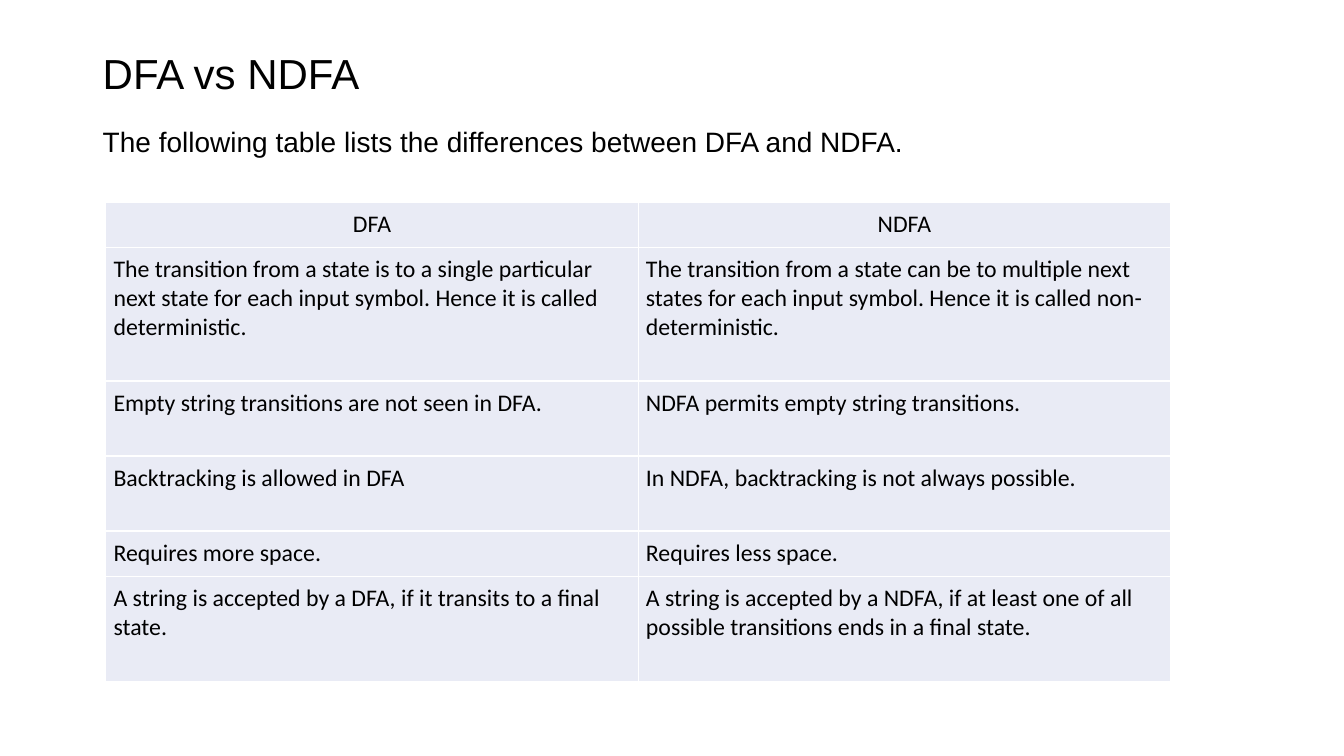
"""Build a slide with a table that compares DFA and NDFA."""
from lxml import etree
from pptx import Presentation
from pptx.dml.color import RGBColor
from pptx.enum.text import MSO_ANCHOR, MSO_AUTO_SIZE, PP_ALIGN
from pptx.oxml.ns import qn
from pptx.util import Pt

MIDDLE = MSO_ANCHOR.MIDDLE
TOP = MSO_ANCHOR.TOP
NO_AUTOFIT = MSO_AUTO_SIZE.NONE
LEFT = PP_ALIGN.LEFT
CENTER = PP_ALIGN.CENTER
JUSTIFY = PP_ALIGN.JUSTIFY

ROWS = [
    (32.4, "DFA", "NDFA"),
    (95.4,
     "The transition from a state is to a single particular next state for each input symbol. "
     "Hence it is called deterministic.",
     "The transition from a state can be to multiple next states for each input symbol. "
     "Hence it is called non-deterministic."),
    (53.6, "Empty string transitions are not seen in DFA.",
     "NDFA permits empty string transitions."),
    (53.6, "Backtracking is allowed in DFA",
     "In NDFA, backtracking is not always possible."),
    (32.4, "Requires more space.", "Requires less space."),
    (75, "A string is accepted by a DFA, if it transits to a final state.",
     "A string is accepted by a NDFA, if at least one of all possible transitions "
     "ends in a final state."),
]


def color(value):
    return RGBColor.from_string(value)


def format_text(para, font_name, size, alignment):
    para.alignment = alignment
    for span in para.runs:
        span.font.name = font_name
        span.font.size = Pt(size)
        span.font.color.rgb = color("000000")


deck = Presentation()
deck.slide_width = Pt(960)
deck.slide_height = Pt(540)
page = deck.slides.add_slide(deck.slide_layouts[1])

title = page.shapes.title
body = page.placeholders[1]
for box, top, height, anchor, text, size, alignment in (
    (title, 21, 66, MIDDLE, "DFA vs NDFA", 30, LEFT),
    (body, 87.8, 399, TOP,
     "The following table lists the differences between DFA and NDFA.", 20, JUSTIFY),
):
    box.left, box.top, box.width, box.height = Pt(66.2), Pt(top), Pt(828), Pt(height)
    frame = box.text_frame
    frame.text = text
    frame.auto_size = NO_AUTOFIT
    frame.vertical_anchor = anchor
    para = frame.paragraphs[0]
    properties = para._p.get_or_add_pPr()
    properties.set("marL", "0")
    properties.set("indent", "0")
    etree.SubElement(properties, qn("a:buNone"))
    para.line_spacing = 0.9
    para.space_before = Pt(0)
    format_text(para, "Arial", size, alignment)

table_height = sum(row[0] for row in ROWS)
table = page.shapes.add_table(
    len(ROWS), 2, Pt(75.6), Pt(144.3), Pt(760.6), Pt(table_height)).table
for column in table.columns:
    column.width = Pt(380.3)

for row_index, (height, *texts) in enumerate(ROWS):
    table.rows[row_index].height = Pt(height)
    for column_index, text in enumerate(texts):
        cell = table.cell(row_index, column_index)
        cell.text_frame.text = text
        cell.margin_left = cell.margin_right = Pt(5.5)
        cell.margin_top = cell.margin_bottom = Pt(5.5)
        para = cell.text_frame.paragraphs[0]
        format_text(para, "Calibri", 17, LEFT if row_index else CENTER)
        for span in para.runs:
            span.font.bold = False
        cell_properties = cell._tc.get_or_add_tcPr()
        for side in ("a:lnL", "a:lnR", "a:lnT", "a:lnB"):
            border = etree.SubElement(cell_properties, qn(side), w=str(Pt(1)))
            border_fill = etree.SubElement(border, qn("a:solidFill"))
            etree.SubElement(border_fill, qn("a:srgbClr"), val="FFFFFF")
        cell.fill.solid()
        cell.fill.fore_color.rgb = color("E9EBF5")

deck.save("out.pptx")
